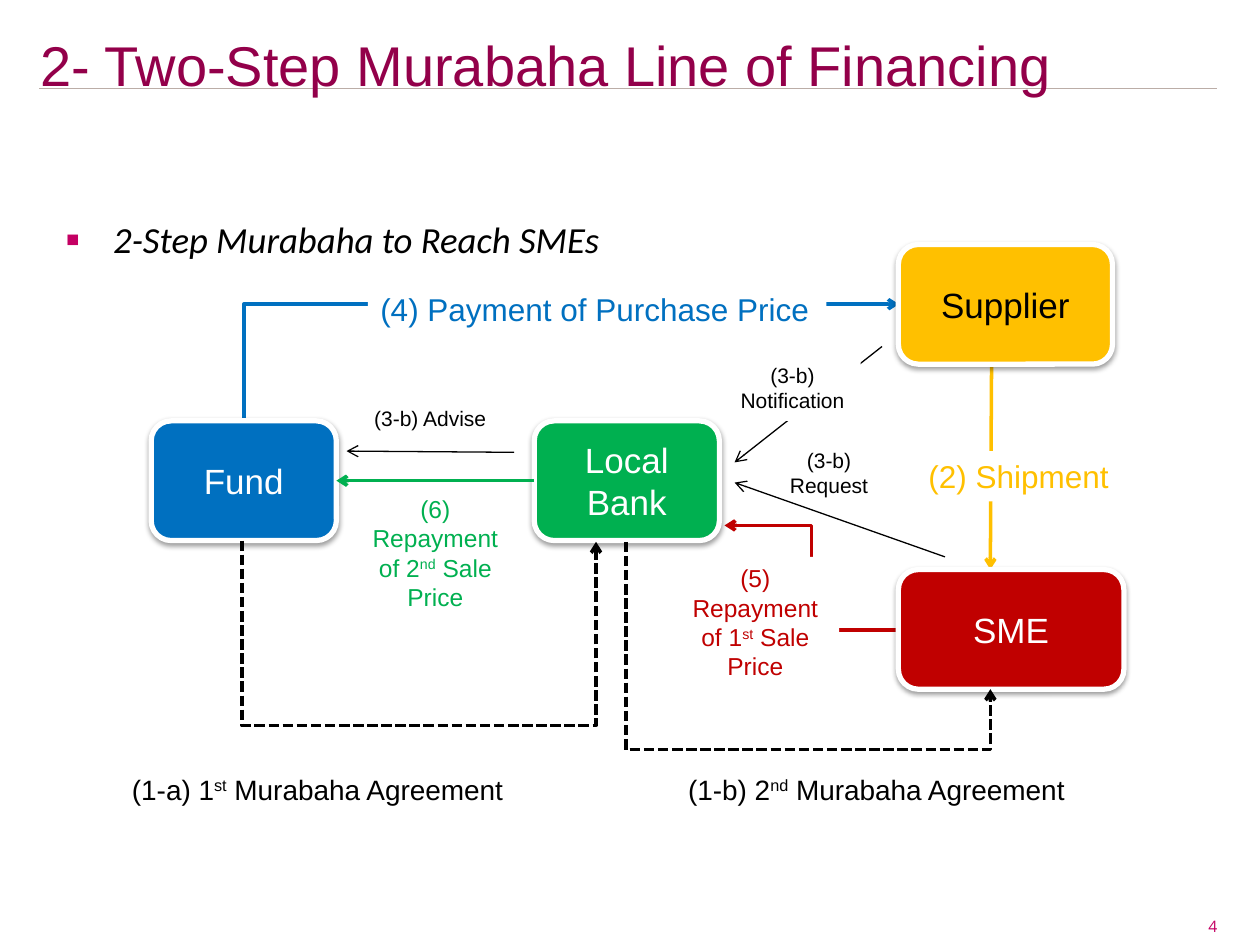
from lxml.etree import SubElement
from pptx import Presentation
from pptx.dml.color import RGBColor
from pptx.enum.dml import MSO_LINE
from pptx.enum.shapes import MSO_CONNECTOR as Link, MSO_SHAPE as Shape
from pptx.enum.text import MSO_ANCHOR as Anchor, PP_ALIGN as Align
from pptx.oxml.ns import qn
from pptx.util import Inches, Pt

BLACK, WHITE, BLUE, GREEN = "000000", "FFFFFF", "0070C0", "00B050"
RED, AMBER, PLUM, MAGENTA, TAUPE = "C00000", "FFC000", "93004A", "C40063", "BBADA7"


def paint(colour_format, colour):
    """Apply a hex colour to a fill's fore colour or a font's colour."""
    colour_format.rgb = RGBColor.from_string(colour)


def write(frame, text, size, colour, align=Align.LEFT, font="Arial"):
    """Write newline-separated paragraphs, with ^marked^ parts raised."""
    for index, content in enumerate(text.split("\n")):
        paragraph = frame.add_paragraph() if index else frame.paragraphs[0]
        for position, part in enumerate(content.split("^")):
            run = paragraph.add_run()
            run.text = part
            if position % 2:
                run._r.get_or_add_rPr().set("baseline", "30000")
        paragraph.alignment = align
        paragraph.font.size = Pt(size)
        paragraph.font.name = font
        paint(paragraph.font.color, colour)


def add_text(slide, place, text, size, colour, **style):
    """Add a wrapping text box and return its frame."""
    frame = slide.shapes.add_textbox(*map(Inches, place)).text_frame
    frame.word_wrap = True
    write(frame, text, size, colour, **style)
    return frame


def add_heading(slide, place, text):
    """Add the italic, square-bulleted line."""
    frame = add_text(slide, place, "", 21, BLACK)
    properties = frame.paragraphs[0]._p.get_or_add_pPr()
    properties.set("marL", str(Inches(0.38)))
    properties.set("indent", str(Inches(-0.38)))
    bullet_colour = SubElement(properties, qn("a:buClr"))
    SubElement(bullet_colour, qn("a:srgbClr"), val=MAGENTA)
    SubElement(properties, qn("a:buSzPct"), val="115000")
    SubElement(properties, qn("a:buFont"), typeface="Arial")
    SubElement(properties, qn("a:buChar"), char="▪")
    for default in properties.findall(qn("a:defRPr")):
        properties.remove(default)
        properties.append(default)
    write(frame, text, 21, BLACK, font="Calibri")
    frame.paragraphs[0].font.italic = True


def add_label(slide, place, text, size, colour, align=Align.CENTER, wrap=True):
    """Add a white label that covers the line behind it."""
    label = slide.shapes.add_shape(Shape.RECTANGLE, *map(Inches, place))
    label.shadow.inherit = False
    label.fill.solid()
    paint(label.fill.fore_color, WHITE)
    label.line.fill.background()
    label.text_frame.word_wrap = wrap
    label.text_frame.vertical_anchor = Anchor.TOP
    write(label.text_frame, text, size, colour, align)


def add_party(slide, left, top, width, name, fill, colour=WHITE):
    """Add a rounded, softly shadowed box for one party."""
    party = slide.shapes.add_shape(
        Shape.ROUNDED_RECTANGLE, *map(Inches, (left, top, width, 0.95)))
    party.fill.solid()
    paint(party.fill.fore_color, fill)
    paint(party.line.color, WHITE)
    party.line.width = Pt(3)
    party.shadow.inherit = False
    effects = party._element.spPr.find(qn("a:effectLst"))
    shadow = SubElement(effects, qn("a:outerShdw"), blurRad=str(Pt(3.1)),
                        dist=str(Pt(1.6)), dir="5400000", rotWithShape="0")
    shade = SubElement(shadow, qn("a:srgbClr"), val=BLACK)
    SubElement(shade, qn("a:alpha"), val="38000")
    frame = party.text_frame
    frame.word_wrap = True
    frame.vertical_anchor = Anchor.MIDDLE
    frame.margin_left = frame.margin_right = Inches(0.16)
    write(frame, name, 20, colour, Align.CENTER)
    return party


def add_line(slide, start, end, colour, width=2, arrow=True, dashed=False, kind=Link.STRAIGHT):
    """Add a connector, by default with an arrowhead at its end."""
    line = slide.shapes.add_connector(kind, *map(Inches, start + end))
    paint(line.line.color, colour)
    line.line.width = Pt(width)
    if dashed:
        line.line.dash_style = MSO_LINE.SQUARE_DOT
    if arrow:
        SubElement(line.line._get_or_add_ln(), qn("a:tailEnd"), type="arrow")
    SubElement(line._element.spPr, qn("a:effectLst"))
    return line


def add_elbow(slide, place, turn, flips, colour, bend=None, dashed=False):
    """Add a turned elbow arrow; a bend gives the share of its middle leg."""
    left, top, width, height = place
    elbow = add_line(slide, (left, top), (left + width, top + height), colour,
                     dashed=dashed, kind=Link.ELBOW)
    properties = elbow._element.spPr
    frame = properties.find(qn("a:xfrm"))
    frame.set("rot", str(turn * 60000))
    for axis in flips:
        frame.set("flip" + axis, "1")
    geometry = properties.find(qn("a:prstGeom"))
    if bend is None:
        geometry.set("prst", "bentConnector2")
    else:
        guides = geometry.find(qn("a:avLst"))
        SubElement(guides, qn("a:gd"), name="adj1", fmla=f"val {round(bend * 100000)}")


def main():
    """Build the financing diagram and save it."""
    deck = Presentation()
    deck.slide_width, deck.slide_height = Inches(10), Inches(7.5)
    slide = deck.slides.add_slide(deck.slide_layouts[6])

    add_line(slide, (0.31, 0.7), (9.66, 0.7), TAUPE, 0.75, arrow=False)
    add_heading(slide, (0.42, 1.67, 9.5, 0.83), "2-Step Murabaha to Reach SMEs")
    add_text(slide, (7.68, 7.23, 2.08, 0.25), "4", 9, MAGENTA,
             align=Align.RIGHT, font="Open Sans")

    add_elbow(slide, (5.75, 4.17, 1.38, 0.83), 180, "", RED, 0.5)
    add_elbow(slide, (4.07, 0.28, 0.93, 5.2), 90, "HV", BLUE)
    add_line(slide, (7.87, 2.89), (7.86, 4.52), AMBER)
    add_label(slide, (7.27, 3.58, 1.65, 0.4), "(2) Shipment", 18, AMBER, Align.LEFT, False)

    financier = add_party(slide, 1.2, 3.34, 1.47, "Fund", BLUE)
    add_party(slide, 7.13, 1.94, 1.7, "Supplier", AMBER, BLACK)
    add_party(slide, 7.13, 4.52, 1.79, "SME", RED)
    bank = add_party(slide, 4.24, 3.34, 1.47, "Local Bank", GREEN)

    add_label(slide, (2.92, 2.25, 3.64, 0.4), "(4) Payment of Purchase Price",
              18, BLUE, Align.LEFT, False)
    add_label(slide, (5.33, 4.42, 1.33, 1.04), "(5) Repayment\nof 1^st^ Sale Price", 14, RED)

    add_elbow(slide, (3.32, 2.89, 0.01, 2.81), 270, "H", BLACK, 149, True)
    add_elbow(slide, (5.83, 3.44, 1.17, 2.89), 270, "H", BLACK, 1.41, True)
    for left, width, agreement in ((5.33, 3.25, "(1-b) 2^nd^"), (0.92, 3.2, "(1-a) 1^st^")):
        add_label(slide, (left, 6.08, width, 0.37), agreement + " Murabaha Agreement",
                  16, BLACK, wrap=False)

    repayment = add_line(slide, (4.24, 3.82), (2.67, 3.82), GREEN)
    repayment.begin_connect(bank, 1)
    repayment.end_connect(financier, 3)
    add_label(slide, (2.83, 3.87, 1.25, 1.04), "(6) Repayment of 2^nd^ Sale Price", 14, GREEN)

    add_line(slide, (7, 2.75), (5.83, 3.67), BLACK, 0.75)
    add_label(slide, (5.75, 2.83, 1.08, 0.51), "(3-b) Notification", 12, BLACK)
    add_label(slide, (6.08, 3.5, 1, 0.51), "(3-b) Request", 12, BLACK)
    add_line(slide, (7.5, 4.42), (5.83, 3.83), BLACK, 0.75)
    add_line(slide, (4.08, 3.59), (2.75, 3.58), BLACK, 0.75)
    add_label(slide, (2.83, 3.17, 1.17, 0.3), "(3-b) Advise", 12, BLACK)

    title = add_text(slide, (0.22, 0.15, 9.44, 0.72),
                     "2- Two-Step Murabaha Line of Financing", 32, PLUM)
    title.vertical_anchor = Anchor.MIDDLE
    deck.save("out.pptx")


if __name__ == "__main__":
    main()
